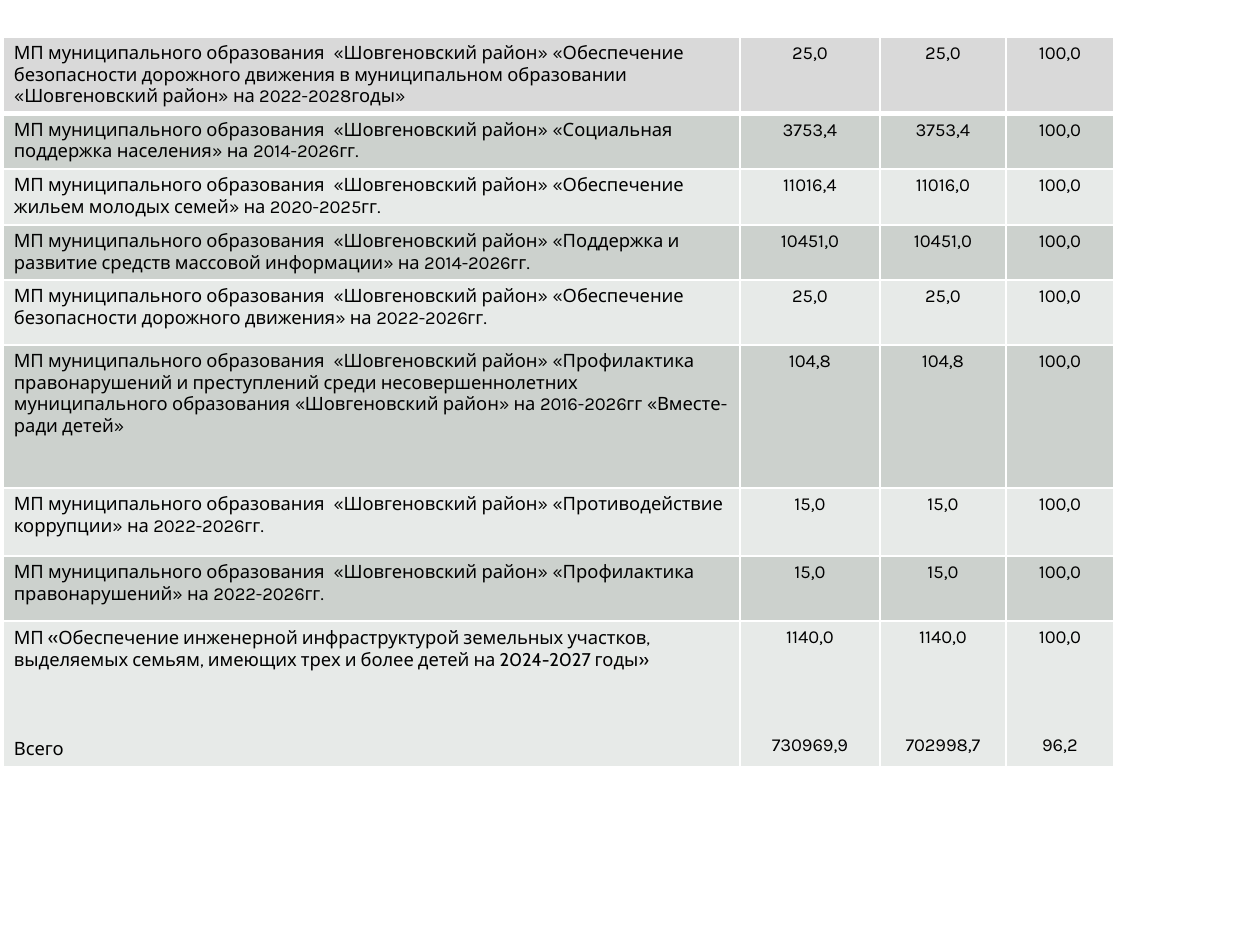
from lxml.etree import SubElement
from pptx import Presentation
from pptx.dml.color import RGBColor as Color
from pptx.enum.text import PP_ALIGN as Align
from pptx.oxml.ns import qn
from pptx.util import Emu, Pt

PX = 914400 / 126
COLUMNS = [737, 140, 126, 108]
HEADER, DARK, LIGHT = "D9D9D9", "CCD1CD", "E7EAE8"
DISTRICT = "МП муниципального образования  «Шовгеновский район» "

# Row height, programme, plan, actual, percent
PROGRAMMES = [
    (75, DISTRICT + "«Обеспечение  безопасности дорожного движения в муниципальном "
     "образовании «Шовгеновский район» на 2022-2028годы»", "25,0", "25,0", "100,0"),
    (56, DISTRICT + "«Социальная поддержка населения» на 2014-2026гг.",
     "3753,4", "3753,4", "100,0"),
    (56, DISTRICT + "«Обеспечение жильем молодых семей» на 2020-2025гг.",
     "11016,4", "11016,0", "100,0"),
    (55, DISTRICT + "«Поддержка и развитие средств массовой информации» на 2014-2026гг.",
     "10451,0", "10451,0", "100,0"),
    (65, DISTRICT + "«Обеспечение безопасности дорожного движения» на 2022-2026гг.",
     "25,0", "25,0", "100,0"),
    (143, DISTRICT + "«Профилактика правонарушений и преступлений среди "
     "несовершеннолетних муниципального образования «Шовгеновский район» "
     "на 2016-2026гг «Вместе-ради детей»", "104,8", "104,8", "100,0"),
    (68, DISTRICT + "«Противодействие коррупции» на 2022-2026гг.",
     "15,0", "15,0", "100,0"),
    (65, DISTRICT + "«Профилактика правонарушений» на 2022-2026гг.",
     "15,0", "15,0", "100,0"),
    (146, "МП «Обеспечение инженерной инфраструктурой земельных участков, "
     "выделяемых семьям, имеющих трех и более детей на 2024-2027 годы»\nВсего",
     "1140,0\n730969,9", "1140,0\n702998,7", "100,0\n96,2"),
]


def px(length):
    return Emu(round(length * PX))


def color(value):
    return Color.from_string(value)


def apply(target, values):
    for name, value in values.items():
        setattr(target, name, value)


def add_borders(cell, widths):
    properties = cell._tc.get_or_add_tcPr()
    for side, width in widths.items():
        line = SubElement(properties, qn(f"a:ln{side}"), w=str(Pt(width)))
        fill = SubElement(line, qn("a:solidFill"))
        SubElement(fill, qn("a:srgbClr"), val="FFFFFF")


def write_cell(cell, text, font, align, total_gap):
    apply(cell, {"margin_left": px(11), "margin_right": px(11),
                 "margin_top": px(6), "margin_bottom": px(6)})
    cell.text = text
    for index, para in enumerate(cell.text_frame.paragraphs):
        # The total stands well below the programme in the same cell
        apply(para, {"alignment": align, "space_before": total_gap if index else Pt(0)})
        for span in para.runs:
            apply(span.font, {"name": font, "size": Pt(10.5), "bold": False})
            span.font.color.rgb = color("000000")


def add_programme_table(page):
    frame = page.shapes.add_table(len(PROGRAMMES), len(COLUMNS), px(3), px(37),
                                  px(sum(COLUMNS)), px(sum(row[0] for row in PROGRAMMES)))
    table = frame.table
    for column, width in zip(table.columns, COLUMNS):
        column.width = px(width)
    last = len(PROGRAMMES) - 1
    for r, (height, *texts) in enumerate(PROGRAMMES):
        table.rows[r].height = px(height)
        shade = HEADER if r == 0 else DARK if r % 2 else LIGHT
        for c, text in enumerate(texts):
            cell = table.cell(r, c)
            add_borders(cell, {"L": 1, "R": 1, "T": 3 if r == 1 else 1,
                               "B": 3 if r == 0 else 1})
            cell.fill.solid()
            cell.fill.fore_color.rgb = color(shade)
            write_cell(cell, text, "Cabin" if r == last and c == 0 else "Karla",
                       Align.CENTER if c else Align.LEFT, px(86 if c else 66))


def main():
    deck = Presentation()
    apply(deck, {"slide_width": px(1260), "slide_height": px(945)})
    page = deck.slides.add_slide(deck.slide_layouts[6])
    add_programme_table(page)
    deck.save("out.pptx")


if __name__ == "__main__":
    main()
